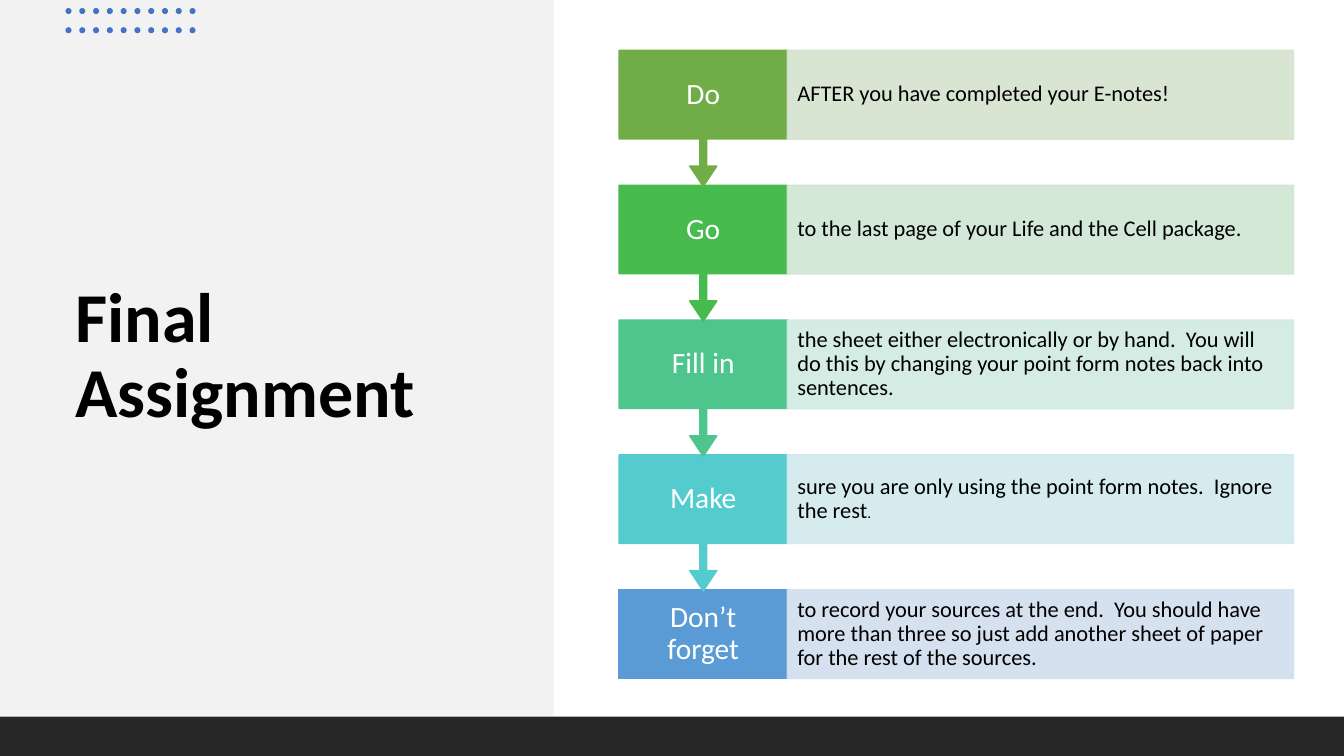
import itertools
from dataclasses import dataclass

import lxml.etree
import pptx
import pptx.dml.color
import pptx.enum.shapes
import pptx.enum.text
import pptx.oxml.ns
import pptx.shapes.autoshape
import pptx.util

Inches = pptx.util.Inches
Shape = pptx.shapes.autoshape.Shape
PRESET = pptx.enum.shapes.MSO_SHAPE
ALIGN = pptx.enum.text.PP_ALIGN

COLOURS = {
    "side panel": "F2F2F2",
    "footer": "262626",
    "dot": "4472C4",
    "black": "000000",
    "white": "FFFFFF",
}
FONT = "Calibri"

DOT_COLUMNS, DOT_ROWS = 10, 2
DOT_LEFT, DOT_TOP, DOT_SIZE = 0.65, 0.08, 0.06
DOT_STEP_X, DOT_STEP_Y = (1.88 - DOT_LEFT) / (DOT_COLUMNS - 1), 0.19

VERB_LEFT, VERB_WIDTH = 6.14, 1.67
DETAIL_LEFT, DETAIL_WIDTH = VERB_LEFT + VERB_WIDTH, 5.02
FIRST_TOP, LAST_TOP = 0.5, 5.85
STEP_HEIGHT, CALLOUT_HEIGHT = 0.88, 1.35
CALLOUT_PROPORTIONS = (0.05, 0.1, 0.15, 0.65)
DETAIL_OPACITY = 90


@dataclass(frozen=True)
class Step:
    verb: str
    detail: str
    colour: str
    tint: str
    small_ending: str = ""


STEPS = [
    Step("Do", "AFTER you have completed your E-notes!", "70AD47", "D5E3CF"),
    Step("Go", "to the last page of your Life and the Cell package.", "48BB4F", "D0E6D4"),
    Step("Fill in", "the sheet either electronically or by hand.  You will do this by "
         "changing your point form notes back into sentences.", "4DC58D", "D0EAE1"),
    Step("Make", "sure you are only using the point form notes.  Ignore the rest",
         "54CCCD", "D1E9ED", small_ending="."),
    Step("Don’t forget", "to record your sources at the end.  You should have more than "
         "three so just add another sheet of paper for the rest of the sources.",
         "5B9BD5", "D2DEEF"),
]


def rgb(colour: str) -> pptx.dml.color.RGBColor:
    return pptx.dml.color.RGBColor.from_string(colour)


def add_block(shapes, preset, box: tuple, colour: str, outlined: bool = False) -> Shape:
    block = shapes.add_shape(preset, *map(Inches, box))
    block.shadow.inherit = False
    block.fill.solid()
    block.fill.fore_color.rgb = rgb(colour)
    if outlined:
        block.line.color.rgb = rgb(colour)
        block.line.width = pptx.util.Pt(1)
    else:
        block.line.fill.background()
    return block


def set_opacity(block: Shape, percent: int) -> None:
    """Apply one opacity to both the fill and the outline."""
    qn = pptx.oxml.ns.qn
    for colour in block._element.spPr.iter(qn("a:srgbClr")):
        lxml.etree.SubElement(colour, qn("a:alpha"), val=str(percent * 1000))


def write(holder: Shape, text: str, size: float, colour: str, align=ALIGN.LEFT,
          insets: tuple = (0.1, 0.05), bold: bool = False, small_ending: str = "") -> None:
    frame = holder.text_frame
    frame.word_wrap = True
    frame.vertical_anchor = pptx.enum.text.MSO_ANCHOR.MIDDLE
    frame.margin_left = frame.margin_right = Inches(insets[0])
    frame.margin_top = frame.margin_bottom = Inches(insets[1])
    paragraph = frame.paragraphs[0]
    paragraph.alignment = align
    paragraph.line_spacing = 0.9
    paragraph.font.name = FONT
    paragraph.font.size = pptx.util.Pt(size)
    paragraph.font.bold = bold
    paragraph.font.color.rgb = rgb(colour)
    paragraph.add_run().text = text
    if small_ending:
        ending = paragraph.add_run()
        ending.text = small_ending
        ending.font.size = pptx.util.Pt(11)


def add_dots(shapes) -> None:
    dots = shapes.add_group_shape().shapes
    for column, row in itertools.product(range(DOT_COLUMNS), range(DOT_ROWS)):
        left, top = DOT_LEFT + column * DOT_STEP_X, DOT_TOP + row * DOT_STEP_Y
        add_block(dots, PRESET.OVAL, (left, top, DOT_SIZE, DOT_SIZE), COLOURS["dot"])


def add_step(shapes, step: Step, top: float, is_last: bool) -> None:
    verb_box = (VERB_LEFT, top, VERB_WIDTH, STEP_HEIGHT)
    if is_last:
        verb = add_block(shapes, PRESET.RECTANGLE, verb_box, step.colour, outlined=True)
    else:
        callout = add_block(shapes, PRESET.UP_ARROW_CALLOUT,
                            (VERB_LEFT, top, VERB_WIDTH, CALLOUT_HEIGHT),
                            step.colour, outlined=True)
        callout.rotation = 180
        for index, proportion in enumerate(CALLOUT_PROPORTIONS):
            callout.adjustments[index] = proportion
        # The callout is upside down, so its verb sits in an upright box.
        verb = shapes.add_textbox(*map(Inches, verb_box))
    write(verb, step.verb, 21, COLOURS["white"], ALIGN.CENTER, insets=(0.12, 0.16))

    detail = add_block(shapes, PRESET.RECTANGLE,
                       (DETAIL_LEFT, top, DETAIL_WIDTH, STEP_HEIGHT),
                       step.tint, outlined=True)
    set_opacity(detail, DETAIL_OPACITY)
    write(detail, step.detail, 16, COLOURS["black"], insets=(0.1, 0.22),
          small_ending=step.small_ending)


def add_steps(shapes) -> None:
    """Draw from the bottom up so that each arrow tip overlaps the next step."""
    flow = shapes.add_group_shape().shapes
    last = len(STEPS) - 1
    pitch = (LAST_TOP - FIRST_TOP) / last
    for index, step in reversed(list(enumerate(STEPS))):
        add_step(flow, step, FIRST_TOP + index * pitch, index == last)


def main() -> None:
    deck = pptx.Presentation()
    deck.slide_width, deck.slide_height = Inches(13.33), Inches(7.5)
    shapes = deck.slides.add_slide(deck.slide_layouts[6]).shapes

    add_block(shapes, PRESET.RECTANGLE, (0, 0, 5.49, 7.1), COLOURS["side panel"])
    title = shapes.add_textbox(*map(Inches, (0.65, 1.32, 4.24, 4.45)))
    write(title, "Final Assignment", 50, COLOURS["black"], bold=True)
    add_dots(shapes)
    add_block(shapes, PRESET.RECTANGLE, (0, 7.11, 13.33, 0.39), COLOURS["footer"])
    add_steps(shapes)

    deck.save("out.pptx")


if __name__ == "__main__":
    main()
